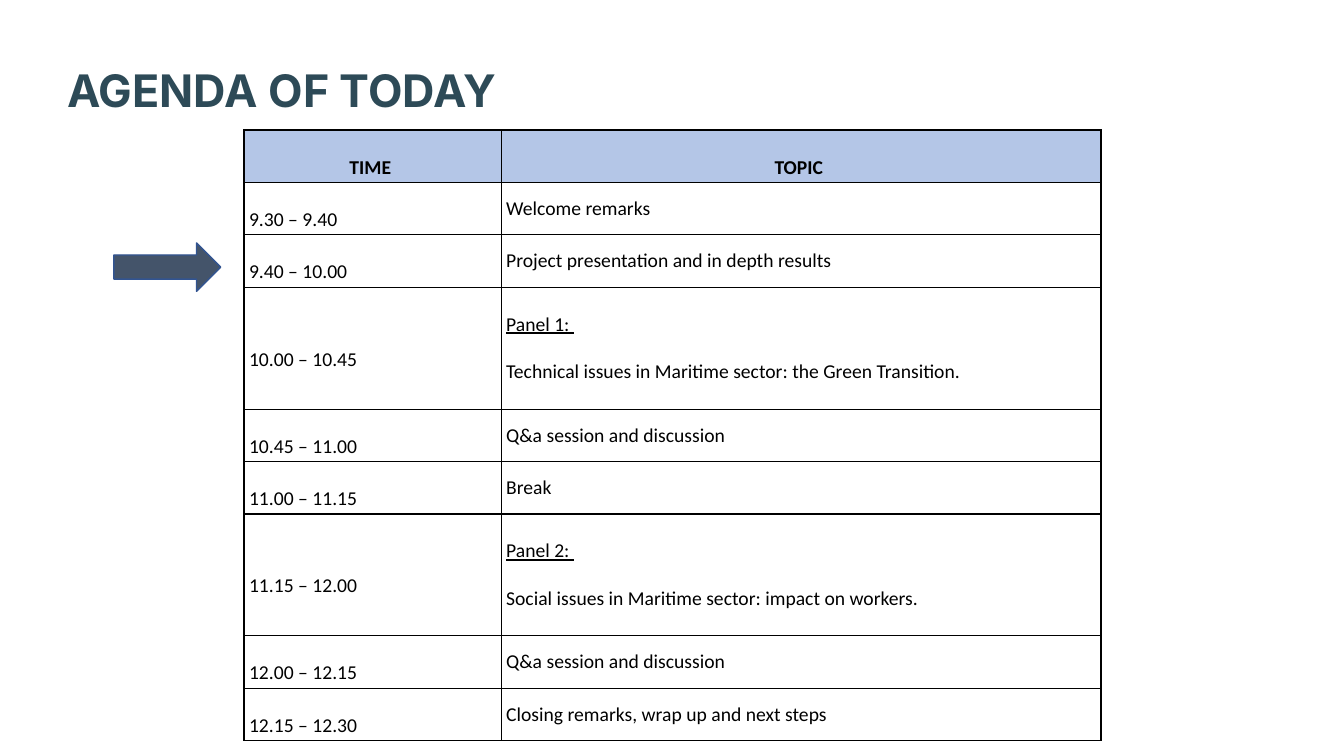
from lxml import etree
from pptx import Presentation
from pptx.dml.color import RGBColor
from pptx.enum.shapes import MSO_SHAPE
from pptx.enum.text import MSO_ANCHOR, PP_ALIGN
from pptx.oxml.ns import qn
from pptx.util import Inches, Pt

RIGHT_ARROW = MSO_SHAPE.RIGHT_ARROW
MIDDLE = MSO_ANCHOR.MIDDLE
LEFT, CENTER = PP_ALIGN.LEFT, PP_ALIGN.CENTER

COLORS = {
    "title": "2D4A57",
    "text": "000000",
    "header": "B4C6E7",
    "cell": "FFFFFF",
    "border": "000000",
    "arrow": "44546A",
    "arrow_line": "325491",
}
TABLE_LEFT, TABLE_TOP, TABLE_WIDTH = 2.42, 1.29, 8.5
COLUMN_SHARES = (0.3, 0.7)
ROW_HEIGHT, PANEL_HEIGHT = 0.52, 1.21
MARGIN, LOWERED_MARGIN = 0.03, 0.25
PANEL_GAP = 17

AGENDA = [
    ("TIME ", ["TOPIC "]),
    ("9.30 – 9.40", ["Welcome remarks"]),
    ("9.40 – 10.00", ["Project presentation and in depth results"]),
    ("10.00 – 10.45", ["Panel 1: ", "Technical issues in Maritime sector: the Green Transition."]),
    ("10.45 – 11.00", ["Q&a session and discussion"]),
    ("11.00 – 11.15", ["Break"]),
    ("11.15 – 12.00", ["Panel 2: ", "Social issues in Maritime sector: impact on workers."]),
    ("12.00 – 12.15", ["Q&a session and discussion"]),
    ("12.15 – 12.30", ["Closing remarks, wrap up and next steps"]),
]


def style_font(font, color, **formats):
    for name, value in formats.items():
        setattr(font, name, value)
    font.color.rgb = RGBColor.from_string(COLORS[color])


def add_borders(cell):
    """Draw a 1 pt line on all four sides; lines must precede the cell fill."""
    properties = cell._tc.get_or_add_tcPr()
    for position, side in enumerate(("lnL", "lnR", "lnT", "lnB")):
        line = etree.Element(qn(f"a:{side}"), w=str(Pt(1)))
        fill = etree.SubElement(line, qn("a:solidFill"))
        etree.SubElement(fill, qn("a:srgbClr"), val=COLORS["border"])
        properties.insert(position, line)


presentation = Presentation()
presentation.slide_width = Inches(13.33)
presentation.slide_height = Inches(7.5)
slide = presentation.slides.add_slide(presentation.slide_layouts[6])

# Title
title = slide.shapes.add_textbox(Inches(0.57), Inches(0.31), Inches(9.14), Inches(0.83))
title.text_frame.word_wrap = True
paragraph = title.text_frame.paragraphs[0]
paragraph.text = "AGENDA OF TODAY"
paragraph.line_spacing = 1.5
style_font(paragraph.font, "title", name="Inter", size=Pt(32), bold=True)

# Agenda table
row_heights = [PANEL_HEIGHT if len(topic) > 1 else ROW_HEIGHT for _, topic in AGENDA]
table = slide.shapes.add_table(
    len(AGENDA), len(COLUMN_SHARES), Inches(TABLE_LEFT), Inches(TABLE_TOP),
    Inches(TABLE_WIDTH), Inches(sum(row_heights)),
).table
for column, share in zip(table.columns, COLUMN_SHARES):
    column.width = Inches(TABLE_WIDTH * share)

for row_index, (time, topic) in enumerate(AGENDA):
    table.rows[row_index].height = Inches(row_heights[row_index])
    is_header = row_index == 0
    for column_index, lines in enumerate(([time], topic)):
        cell = table.cell(row_index, column_index)
        is_lowered = is_header or column_index == 0
        cell.vertical_anchor = MIDDLE
        cell.margin_left = cell.margin_right = Inches(0.05)
        cell.margin_top = Inches(LOWERED_MARGIN if is_lowered else MARGIN)
        cell.margin_bottom = Inches(MARGIN)
        cell.fill.solid()
        cell.fill.fore_color.rgb = RGBColor.from_string(COLORS["header" if is_header else "cell"])
        add_borders(cell)
        cell.text_frame.text = "\n".join(lines)
        for line_index, paragraph in enumerate(cell.text_frame.paragraphs):
            paragraph.alignment = CENTER if is_header else LEFT
            if line_index > 0:
                paragraph.space_before = Pt(PANEL_GAP)
            is_panel_name = len(lines) > 1 and line_index == 0
            style_font(paragraph.runs[0].font, "text", name="Calibri", size=Pt(14),
                       bold=is_header, underline=is_panel_name)

# Arrow at the current item
arrow = slide.shapes.add_shape(RIGHT_ARROW, Inches(1.13), Inches(2.41), Inches(1.06), Inches(0.48))
arrow.shadow.inherit = False
arrow.fill.solid()
arrow.fill.fore_color.rgb = RGBColor.from_string(COLORS["arrow"])
arrow.line.color.rgb = RGBColor.from_string(COLORS["arrow_line"])
arrow.line.width = Pt(1)

presentation.save("out.pptx")
